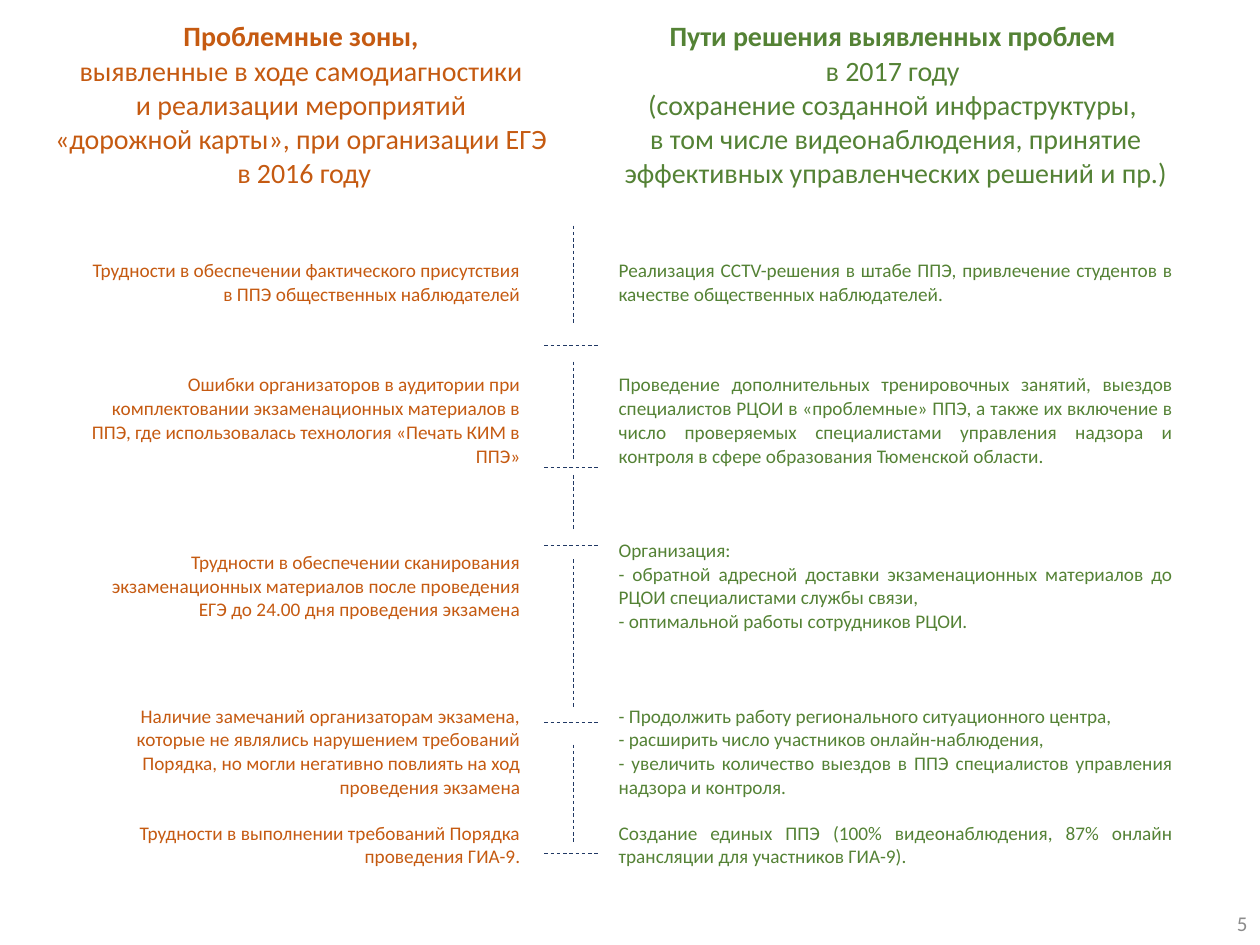
import pptx
import pptx.dml.color
import pptx.enum.dml
import pptx.enum.shapes
import pptx.enum.text
import pptx.oxml.ns
import pptx.util
from lxml import etree
from pptx.util import Inches

RGBColor = pptx.dml.color.RGBColor
Align = pptx.enum.text.PP_ALIGN
Anchor = pptx.enum.text.MSO_ANCHOR

ORANGE = RGBColor(0xC5, 0x5A, 0x11)
GREEN = RGBColor(0x54, 0x82, 0x35)
NAVY = RGBColor(0x20, 0x38, 0x64)
GRAY = RGBColor(0x8C, 0x8C, 0x8C)
FONT = "Calibri"

COLUMN_WIDTHS = (4.21, 5.18)
ROW_HEIGHTS = (1.47, 1.23, 0.96, 1.67, 0.96, 0.52)
COLUMN_COLORS = (ORANGE, GREEN)
BODY_ALIGNMENTS = (Align.RIGHT, Align.JUSTIFY)

HEADINGS = (
    ["Проблемные зоны, ",
     "выявленные в ходе самодиагностики \vи реализации мероприятий \v"
     "«дорожной карты», при организации ЕГЭ \vв 2016 году"],
    ["Пути решения выявленных проблем ",
     "в 2017 году ",
     "(сохранение созданной инфраструктуры, \vв том числе видеонаблюдения, "
     "принятие эффективных управленческих решений и пр.)"],
)
PROBLEMS_AND_SOLUTIONS = (
    (["Трудности в обеспечении фактического присутствия в ППЭ общественных наблюдателей"],
     ["Реализация CCTV-решения в штабе ППЭ, привлечение студентов в качестве "
      "общественных наблюдателей."]),
    (["Ошибки организаторов в аудитории при комплектовании экзаменационных материалов "
      "в ППЭ, где использовалась технология «Печать КИМ в ППЭ»"],
     ["Проведение дополнительных тренировочных занятий, выездов специалистов РЦОИ "
      "в «проблемные» ППЭ, а также их включение в число проверяемых специалистами "
      "управления надзора и контроля в сфере образования Тюменской области."]),
    (["Трудности в обеспечении сканирования экзаменационных материалов после проведения "
      "ЕГЭ до 24.00 дня проведения экзамена"],
     ["Организация:",
      "- обратной адресной доставки экзаменационных материалов до РЦОИ специалистами "
      "службы связи, ",
      "- оптимальной работы сотрудников РЦОИ."]),
    (["Наличие замечаний организаторам экзамена, которые не являлись нарушением "
      "требований Порядка, но могли негативно повлиять на ход проведения экзамена"],
     ["- Продолжить работу регионального ситуационного центра,",
      "- расширить число участников онлайн-наблюдения,",
      "- увеличить количество выездов в ППЭ специалистов управления надзора и контроля."]),
    (["Трудности в выполнении требований Порядка проведения ГИА-9."],
     ["Создание единых ППЭ (100% видеонаблюдения, 87% онлайн трансляции для участников "
      "ГИА-9)."]),
)

VERTICAL_SPANS = ((0, 0.79), (1.08, 1.87), (1.98, 2.42), (2.65, 3.83), (4.12, 4.91))
HORIZONTAL_OFFSETS = (0.95, 1.92, 2.54, 3.94, 4.98)


def format_paragraph(paragraph, size, color, alignment, bold=False):
    """Apply font and alignment to a paragraph."""
    paragraph.alignment = alignment
    paragraph.font.name = FONT
    paragraph.font.size = pptx.util.Pt(size)
    paragraph.font.bold = bold
    paragraph.font.color.rgb = color


def fill_cell(cell, lines, color, alignment, is_heading):
    """Write the paragraphs of one table cell."""
    cell.fill.background()
    cell.margin_left = cell.margin_right = Inches(0.05 if is_heading else 0.39)
    cell.margin_top = cell.margin_bottom = 0
    cell.vertical_anchor = Anchor.TOP if is_heading else Anchor.MIDDLE
    cell.text = "\n".join(lines)
    for index, paragraph in enumerate(cell.text_frame.paragraphs):
        format_paragraph(paragraph, 16 if is_heading else 11, color, alignment,
                         bold=is_heading and index == 0)


def add_problem_table(slide, left, top):
    """Add the two-column table of problems and solutions."""
    rows = (HEADINGS,) + PROBLEMS_AND_SOLUTIONS
    table = slide.shapes.add_table(
        len(rows), len(COLUMN_WIDTHS), Inches(left), Inches(top),
        Inches(sum(COLUMN_WIDTHS)), Inches(sum(ROW_HEIGHTS))).table
    table.first_row = table.horz_banding = False
    for column, width in zip(table.columns, COLUMN_WIDTHS):
        column.width = Inches(width)
    for row_index, (cells, height) in enumerate(zip(rows, ROW_HEIGHTS)):
        table.rows[row_index].height = Inches(height)
        is_heading = row_index == 0
        for column_index, lines in enumerate(cells):
            alignment = Align.CENTER if is_heading else BODY_ALIGNMENTS[column_index]
            fill_cell(table.cell(row_index, column_index), lines,
                      COLUMN_COLORS[column_index], alignment, is_heading)


def add_dashed_line(slide, start_x, start_y, end_x, end_y):
    """Add one thin dashed line without a shadow."""
    connector = slide.shapes.add_connector(
        pptx.enum.shapes.MSO_CONNECTOR.STRAIGHT,
        Inches(start_x), Inches(start_y), Inches(end_x), Inches(end_y))
    connector.line.color.rgb = NAVY
    connector.line.width = pptx.util.Pt(0.5)
    connector.line.dash_style = pptx.enum.dml.MSO_LINE.DASH
    etree.SubElement(connector._element.spPr, pptx.oxml.ns.qn("a:effectLst"))


def add_divider(slide, left, top, width):
    """Add the dashed divider between the two columns."""
    axis = left + 0.23
    for start, end in VERTICAL_SPANS:
        add_dashed_line(slide, axis, top + start, axis, top + end)
    for offset in HORIZONTAL_OFFSETS:
        add_dashed_line(slide, left, top + offset, left + width, top + offset)


def add_page_number(slide, left, top, width, height):
    """Add the page number in the bottom corner."""
    shape = slide.shapes.add_textbox(
        Inches(left), Inches(top), Inches(width), Inches(height))
    shape.text_frame.word_wrap = True
    shape.text_frame.vertical_anchor = Anchor.MIDDLE
    shape.text_frame.text = "5"
    format_paragraph(shape.text_frame.paragraphs[0], 12, GRAY, Align.RIGHT)


def main():
    """Build and save the presentation."""
    presentation = pptx.Presentation()
    presentation.slide_width = Inches(10)
    presentation.slide_height = Inches(7.5)
    slide = presentation.slides.add_slide(presentation.slide_layouts[6])
    add_page_number(slide, 7.75, 7.13, 2.25, 0.4)
    add_problem_table(slide, 0.31, 0.16)
    add_divider(slide, 4.32, 1.79, 0.43)
    presentation.save("out.pptx")


if __name__ == "__main__":
    main()
